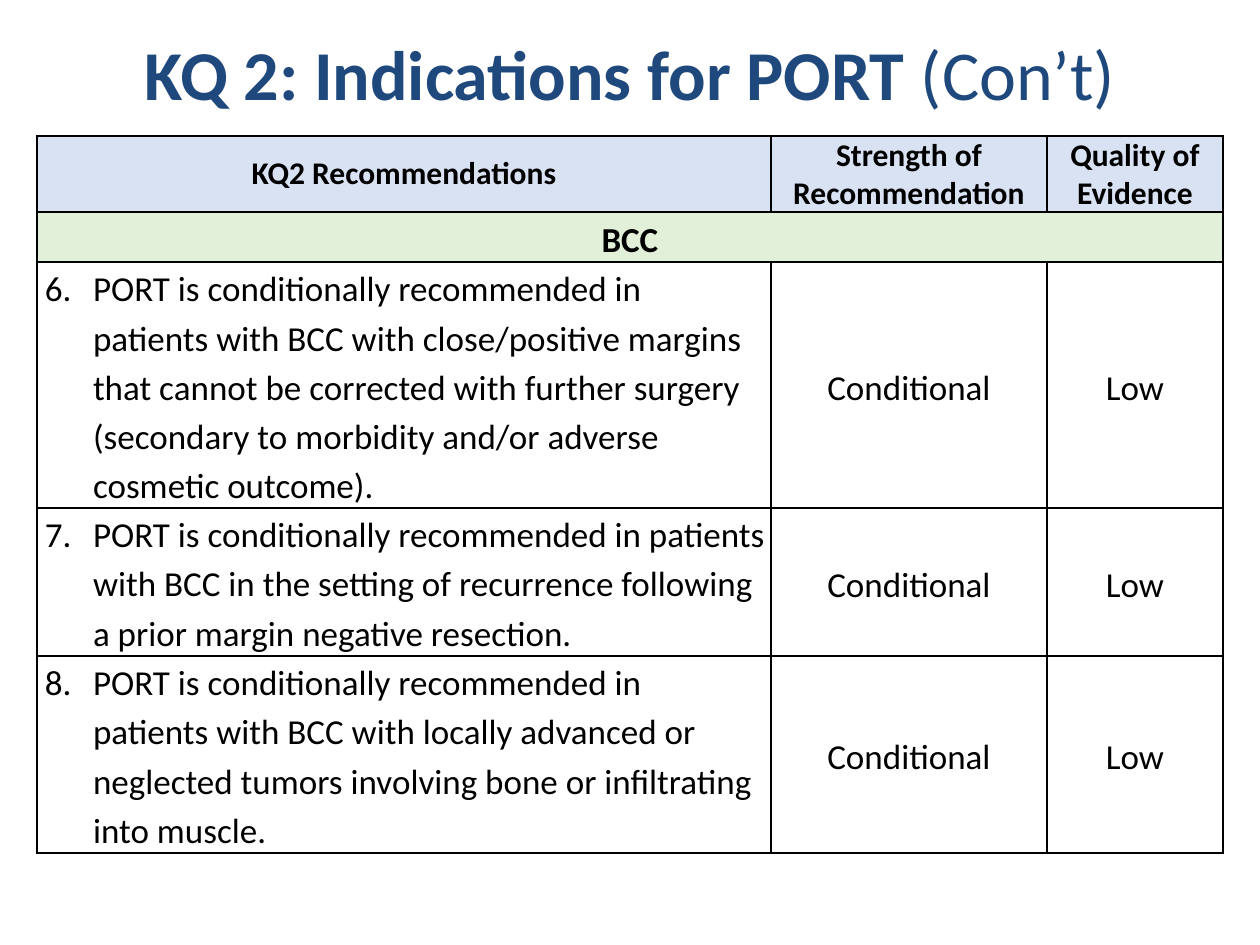
"""Build the slide of KQ 2 recommendations on PORT for BCC."""
import lxml.etree
import pptx
import pptx.dml.color
import pptx.enum.text
import pptx.oxml.ns
import pptx.util

PX = 914400 // 126
FONT = "Calibri"
NAVY = pptx.dml.color.RGBColor(0x1F, 0x49, 0x7D)
BLACK = pptx.dml.color.RGBColor(0, 0, 0)
BLUE_TINT = pptx.dml.color.RGBColor(0xD9, 0xE2, 0xF3)
GREEN_TINT = pptx.dml.color.RGBColor(0xE2, 0xEF, 0xD9)
ALIGN = pptx.enum.text.PP_ALIGN
ANCHOR = pptx.enum.text.MSO_ANCHOR

COLUMN_WIDTHS = [734, 276, 176]
ROW_HEIGHTS = [76, 50, 246, 148, 197]
HANGING = 48
INSET = 8
HEADINGS = ["KQ2 Recommendations", "Strength of Recommendation", "Quality of Evidence"]
RECOMMENDATIONS = [
    ("6.\tPORT is conditionally recommended in patients with BCC with close/positive "
     "margins that cannot be corrected with further surgery (secondary to morbidity "
     "and/or adverse cosmetic outcome).", "Conditional", "Low", 14),
    ("7.\tPORT is conditionally recommended in patients with BCC in the setting of "
     "recurrence following a prior margin negative resection.", "Conditional", "Low", 4),
    ("8.\tPORT is conditionally recommended in patients with BCC with locally advanced "
     "or neglected tumors involving bone or infiltrating into muscle.",
     "Conditional", "Low", 14),
]


def style_font(font, size, color, bold):
    """Set the slide's typeface with a size, colour and weight."""
    font.name = FONT
    font.size = pptx.util.Pt(size)
    font.color.rgb = color
    font.bold = bold


def add_borders(cell):
    """Draw a thin black line on all four sides of a cell."""
    properties = cell._tc.get_or_add_tcPr()
    qn = pptx.oxml.ns.qn
    for side in ("a:lnL", "a:lnR", "a:lnT", "a:lnB"):
        line = lxml.etree.SubElement(properties, qn(side), w=str(pptx.util.Pt(1)))
        solid = lxml.etree.SubElement(line, qn("a:solidFill"))
        lxml.etree.SubElement(solid, qn("a:srgbClr"), val=str(BLACK))


def fill_cell(cell, text, size=20, bold=False, tint=None, spacing=1.15,
              align=ALIGN.CENTER, hanging=0, right=INSET):
    """Write one table cell."""
    cell.text = text
    cell.margin_left, cell.margin_right = INSET * PX, right * PX
    cell.margin_top = cell.margin_bottom = 0
    cell.vertical_anchor = ANCHOR.MIDDLE if align == ALIGN.CENTER else ANCHOR.TOP
    paragraph = cell.text_frame.paragraphs[0]
    paragraph.alignment = align
    paragraph.line_spacing = spacing
    if hanging:
        properties = paragraph._p.get_or_add_pPr()
        properties.set("marL", str(hanging * PX))
        properties.set("indent", str(-hanging * PX))
    style_font(paragraph.font, size, BLACK, bold)
    if tint is None:
        cell.fill.background()
    else:
        cell.fill.solid()
        cell.fill.fore_color.rgb = tint


def add_title(slide, left, top, width, height):
    """Place the two-weight slide title."""
    frame = slide.shapes.add_textbox(
        left * PX, top * PX, width * PX, height * PX).text_frame
    frame.word_wrap = True
    frame.vertical_anchor = ANCHOR.TOP
    frame.margin_top = 10 * PX
    paragraph = frame.paragraphs[0]
    paragraph.alignment = ALIGN.CENTER
    for text, bold in (("KQ 2: Indications for PORT ", True), ("(Con’t)", False)):
        run = paragraph.add_run()
        run.text = text
        style_font(run.font, 40, NAVY, bold)


def add_recommendations(slide, left, top):
    """Place the table of recommendations, strength and evidence."""
    table = slide.shapes.add_table(
        len(ROW_HEIGHTS), len(COLUMN_WIDTHS), left * PX, top * PX,
        sum(COLUMN_WIDTHS) * PX, sum(ROW_HEIGHTS) * PX).table
    table.first_row = table.horz_banding = False
    for column, width in zip(table.columns, COLUMN_WIDTHS):
        column.width = width * PX
    for row, height in zip(table.rows, ROW_HEIGHTS):
        row.height = height * PX
    for cell in table.iter_cells():
        add_borders(cell)
    for column, heading in enumerate(HEADINGS):
        fill_cell(table.cell(0, column), heading, size=18, bold=True,
                  tint=BLUE_TINT, spacing=1.0)
    tumor_type = table.cell(1, 0)
    tumor_type.merge(table.cell(1, 2))
    fill_cell(tumor_type, "BCC", bold=True, tint=GREEN_TINT)
    for row, (advice, strength, quality, right) in enumerate(RECOMMENDATIONS, start=2):
        fill_cell(table.cell(row, 0), advice, align=ALIGN.LEFT,
                  hanging=HANGING, right=right)
        fill_cell(table.cell(row, 1), strength, hanging=HANGING)
        fill_cell(table.cell(row, 2), quality)


def main():
    """Create and save the presentation."""
    deck = pptx.Presentation()
    deck.slide_width = pptx.util.Inches(10)
    deck.slide_height = pptx.util.Inches(7.5)
    slide = deck.slides.add_slide(deck.slide_layouts[6])
    add_title(slide, 63, 21, 1134, 158)
    add_recommendations(slide, 37, 136)
    deck.save("out.pptx")


if __name__ == "__main__":
    main()
